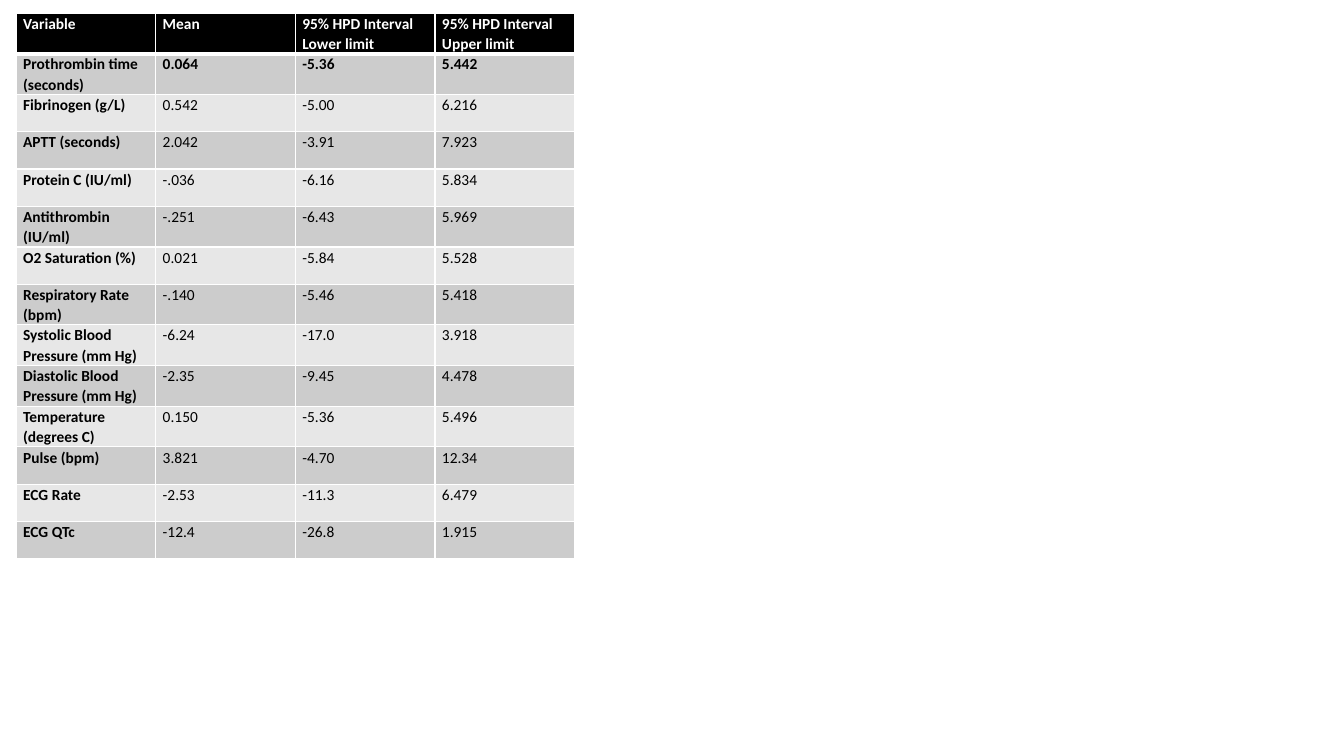
from lxml.etree import SubElement
from pptx import Presentation
from pptx.dml.color import RGBColor
from pptx.oxml.ns import qn
from pptx.util import Inches, Pt

# Colours
BLACK = RGBColor(0x00, 0x00, 0x00)
WHITE = RGBColor(0xFF, 0xFF, 0xFF)
DARK_BAND = RGBColor(0xCC, 0xCC, 0xCC)
LIGHT_BAND = RGBColor(0xE7, 0xE7, 0xE7)

# Table grid
LEFT, TOP = Inches(0.16), Inches(0.13)
TABLE_WIDTH = Inches(5.54)
ROW_HEIGHT = Inches(0.37)
SIDE_MARGIN = Inches(0.07)

HEADINGS = ("Variable", "Mean", "95% HPD Interval Lower limit",
            "95% HPD Interval Upper limit")
RESULTS = (
    ("Prothrombin time (seconds)", "0.064", "-5.36", "5.442"),
    ("Fibrinogen (g/L)", "0.542", "-5.00", "6.216"),
    ("APTT (seconds)", "2.042", "-3.91", "7.923"),
    ("Protein C (IU/ml)", "-.036", "-6.16", "5.834"),
    ("Antithrombin (IU/ml)", "-.251", "-6.43", "5.969"),
    ("O2 Saturation (%)", "0.021", "-5.84", "5.528"),
    ("Respiratory Rate (bpm)", "-.140", "-5.46", "5.418"),
    ("Systolic Blood Pressure (mm Hg)", "-6.24", "-17.0", "3.918"),
    ("Diastolic Blood Pressure (mm Hg)", "-2.35", "-9.45", "4.478"),
    ("Temperature (degrees C)", "0.150", "-5.36", "5.496"),
    ("Pulse (bpm)", "3.821", "-4.70", "12.34"),
    ("ECG Rate", "-2.53", "-11.3", "6.479"),
    ("ECG QTc", "-12.4", "-26.8", "1.915"),
)


def set_borders(cell, bottom_width):
    """Draw white lines on all four sides of a cell."""
    properties = cell._tc.get_or_add_tcPr()
    for side in ("L", "R", "T", "B"):
        width = bottom_width if side == "B" else 1
        line = SubElement(properties, qn(f"a:ln{side}"), w=str(Pt(width)))
        fill = SubElement(line, qn("a:solidFill"))
        SubElement(fill, qn("a:srgbClr"), val=str(WHITE))


def write_cell(cell, text, colour, bold):
    cell.margin_left = cell.margin_right = SIDE_MARGIN
    cell.margin_top = cell.margin_bottom = 0
    paragraph = cell.text_frame.paragraphs[0]
    paragraph.line_spacing = 1.07
    run = paragraph.add_run()
    run.text = text
    run.font.name = "Calibri"
    run.font.size = Pt(11)
    run.font.bold = bold
    run.font.color.rgb = colour


def fill_row(table, row, texts):
    """Style one row: black header, then alternating grey bands."""
    is_header = row == 0
    band = BLACK if is_header else DARK_BAND if row % 2 else LIGHT_BAND
    for column, text in enumerate(texts):
        cell = table.cell(row, column)
        # The header, the first result and the variable names are bold
        write_cell(cell, text, WHITE if is_header else BLACK,
                   bold=row <= 1 or column == 0)
        set_borders(cell, bottom_width=3 if is_header else 1)
        cell.fill.solid()
        cell.fill.fore_color.rgb = band


def add_results_table(slide):
    rows = (HEADINGS, *RESULTS)
    table = slide.shapes.add_table(
        len(rows), len(HEADINGS), LEFT, TOP,
        TABLE_WIDTH, ROW_HEIGHT * len(rows)).table
    for row, texts in enumerate(rows):
        fill_row(table, row, texts)


def main():
    presentation = Presentation()
    presentation.slide_width = Inches(13.33)
    presentation.slide_height = Inches(7.5)
    slide = presentation.slides.add_slide(presentation.slide_layouts[6])
    add_results_table(slide)
    presentation.save("out.pptx")


if __name__ == "__main__":
    main()
